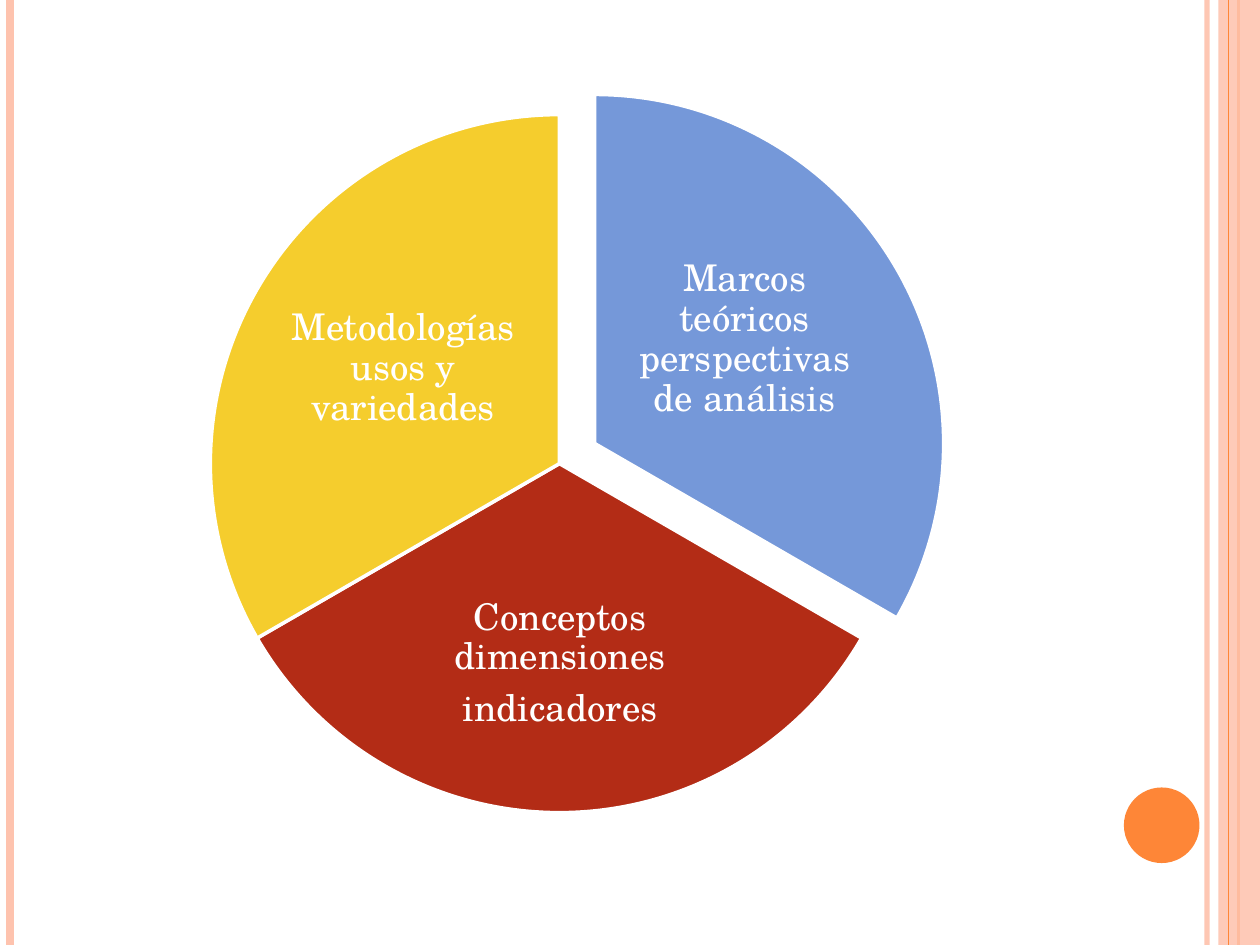
from lxml import etree
from pptx import Presentation
from pptx.dml.color import RGBColor
from pptx.enum.shapes import MSO_CONNECTOR, MSO_SHAPE
from pptx.enum.text import MSO_ANCHOR, PP_ALIGN
from pptx.oxml.ns import qn
from pptx.util import Inches, Pt

STRAIGHT = MSO_CONNECTOR.STRAIGHT
RECTANGLE, OVAL, PIE = MSO_SHAPE.RECTANGLE, MSO_SHAPE.OVAL, MSO_SHAPE.PIE
MIDDLE, CENTER = MSO_ANCHOR.MIDDLE, PP_ALIGN.CENTER
FONT = "TeX Gyre Schola"
ORANGE, PEACH, WHITE = "FE8637", "FEC3AE", "FFFFFF"


def paint(fill, color, opacity=100):
    """Make a fill solid, with opacity in percent."""
    fill.solid()
    fill.fore_color.rgb = RGBColor.from_string(color)
    if opacity < 100:
        for solid_color in fill._xPr.iter(qn("a:srgbClr")):
            etree.SubElement(solid_color, qn("a:alpha"), val=str(opacity * 1000))


def add_filled(kind, left, top, width, height, color, opacity=100):
    shape = slide.shapes.add_shape(
        kind, Inches(left), Inches(top), Inches(width), Inches(height))
    shape.shadow.inherit = False
    paint(shape.fill, color, opacity)
    shape.line.fill.background()
    return shape


prs = Presentation()
prs.slide_width, prs.slide_height = Inches(10), Inches(7.5)
slide = prs.slides.add_slide(prs.slide_layouts[6])

# Side stripes: x, colour, width in points, opacity; the band lies under the last one
stripes = [
    (9.58, PEACH, 3, 93),
    (0.08, PEACH, 4.5, 100),
    (9.83, ORANGE, 1.5, 100),
    (9.75, ORANGE, 0.75, 100),
]
for x, color, width, opacity in stripes:
    if x == 9.75:
        add_filled(RECTANGLE, 9.67, 0, 0.33, 7.5, PEACH, 87)
    stripe = slide.shapes.add_connector(STRAIGHT, Inches(x), 0, Inches(x), Inches(7.5))
    stripe.line.width = Pt(width)
    paint(stripe.line.fill, color, opacity)
    etree.SubElement(stripe._element.spPr, qn("a:effectLst"))

add_filled(OVAL, 8.92, 6.25, 0.6, 0.6, ORANGE)

# Sectors: left and top of the full circle, start and end angle, colour,
# label box, label paragraphs. Angles are in units of 5/3 degree.
diameter = 5.54
sectors = [
    (1.95, 0.75, 162, 18, "7598D9", (4.97, 1.77, 1.88, 1.85),
     ["Marcos teóricos perspectivas de análisis"]),
    (1.67, 0.91, 18, 90, "B32C16", (3.19, 4.41, 2.51, 1.72),
     ["Conceptos dimensiones", "indicadores"]),
    (1.67, 0.91, 90, 162, "F5CD2D", (2.26, 2, 1.88, 1.85),
     ["Metodologías usos y variedades"]),
]
for left, top, start, end, color, label_box, paragraphs in sectors:
    sector = add_filled(PIE, left, top, diameter, diameter, color)
    sector.adjustments[0] = start
    sector.adjustments[1] = end
    sector.line.width = Pt(2)
    paint(sector.line.fill, WHITE)

    label = slide.shapes.add_textbox(*map(Inches, label_box)).text_frame
    label.word_wrap = True
    label.vertical_anchor = MIDDLE
    label.margin_left = label.margin_right = Inches(0.03)
    label.margin_top = label.margin_bottom = Inches(0.03)
    for i, wording in enumerate(paragraphs):
        paragraph = label.add_paragraph() if i else label.paragraphs[0]
        paragraph.alignment = CENTER
        paragraph.line_spacing = 0.9
        paragraph.space_after = Pt(7)
        run = paragraph.add_run()
        run.text = wording
        run.font.name = FONT
        run.font.size = Pt(21)
        paint(run.font.fill, WHITE)

prs.save("out.pptx")
